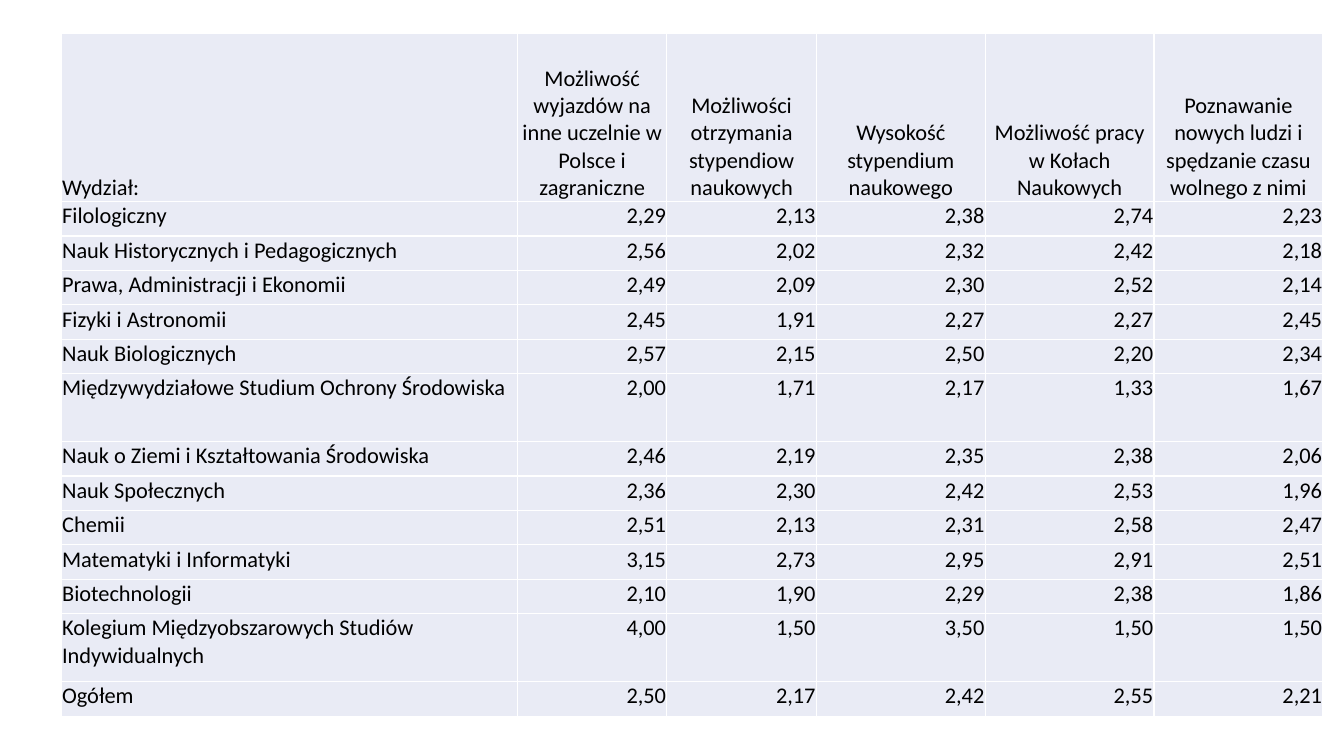
from lxml.etree import SubElement
from pptx import Presentation
from pptx.dml.color import RGBColor
from pptx.enum.text import MSO_ANCHOR, PP_ALIGN
from pptx.oxml.ns import qn
from pptx.util import Pt

SCALE = 7620
BLACK = RGBColor(0x00, 0x00, 0x00)
WHITE = RGBColor(0xFF, 0xFF, 0xFF)
PALE = RGBColor(0xE9, 0xEB, 0xF5)

HEADS = [
    "Wydział:",
    "Możliwość wyjazdów na inne uczelnie w Polsce i zagraniczne",
    "Możliwości otrzymania stypendiow naukowych",
    "Wysokość stypendium naukowego",
    "Możliwość pracy w Kołach Naukowych",
    "Poznawanie nowych ludzi i spędzanie czasu wolnego z nimi",
]
SCORES = [
    ("Filologiczny", "2,29 2,13 2,38 2,74 2,23"),
    ("Nauk Historycznych i Pedagogicznych", "2,56 2,02 2,32 2,42 2,18"),
    ("Prawa, Administracji i Ekonomii", "2,49 2,09 2,30 2,52 2,14"),
    ("Fizyki i Astronomii", "2,45 1,91 2,27 2,27 2,45"),
    ("Nauk Biologicznych", "2,57 2,15 2,50 2,20 2,34"),
    ("Międzywydziałowe Studium Ochrony Środowiska", "2,00 1,71 2,17 1,33 1,67"),
    ("Nauk o Ziemi i Kształtowania Środowiska", "2,46 2,19 2,35 2,38 2,06"),
    ("Nauk Społecznych", "2,36 2,30 2,42 2,53 1,96"),
    ("Chemii", "2,51 2,13 2,31 2,58 2,47"),
    ("Matematyki i Informatyki", "3,15 2,73 2,95 2,91 2,51"),
    ("Biotechnologii", "2,10 1,90 2,29 2,38 1,86"),
    ("Kolegium Międzyobszarowych Studiów Indywidualnych", "4,00 1,50 3,50 1,50 1,50"),
    ("Ogółem", "2,50 2,17 2,42 2,55 2,21"),
]
WIDTHS = [543, 178, 178, 201, 201, 201]
HEAD, LOW, TALL = 200, 41, 81
LONG = 40


def px(size):
    return size * SCALE


class Sheet:
    font = "Calibri"
    size = Pt(16)

    def __init__(self, deck):
        self.slide = deck.slides.add_slide(deck.slide_layouts[6])

    def table(self, left, top, widths, heights, rows):
        frame = self.slide.shapes.add_table(
            len(rows), len(widths), px(left), px(top),
            px(sum(widths)), px(sum(heights)))
        grid = frame.table
        grid.first_row = grid.horz_banding = False
        for col, width in zip(grid.columns, widths):
            col.width = px(width)
        for row, height in zip(grid.rows, heights):
            row.height = px(height)
        for y, row in enumerate(rows):
            for x, text in enumerate(row):
                self.cell(grid.cell(y, x), text, y == 0, x == 0)

    def cell(self, cell, text, head, name):
        cell.margin_left = cell.margin_right = cell.margin_top = px(1)
        cell.margin_bottom = 0
        cell.vertical_anchor = MSO_ANCHOR.BOTTOM if head else MSO_ANCHOR.TOP
        self.edges(cell)
        cell.fill.solid()
        cell.fill.fore_color.rgb = PALE
        para = cell.text_frame.paragraphs[0]
        if name:
            para.alignment = PP_ALIGN.LEFT
        else:
            para.alignment = PP_ALIGN.CENTER if head else PP_ALIGN.RIGHT
        self.run(para, text)

    def edges(self, cell):
        props = cell._tc.get_or_add_tcPr()
        for side in ("a:lnL", "a:lnR", "a:lnT", "a:lnB"):
            line = SubElement(props, qn(side), w=str(Pt(1)))
            fill = SubElement(line, qn("a:solidFill"))
            SubElement(fill, qn("a:srgbClr"), val=str(WHITE))

    def run(self, para, text):
        run = para.add_run()
        run.text = text
        run.font.name = self.font
        run.font.size = self.size
        run.font.color.rgb = BLACK


def main():
    deck = Presentation()
    deck.slide_width, deck.slide_height = px(1600), px(900)
    rows = [HEADS] + [[name, *marks.split()] for name, marks in SCORES]
    heights = [HEAD] + [TALL if len(name) > LONG else LOW for name, _ in SCORES]
    Sheet(deck).table(73, 40, WIDTHS, heights, rows)
    deck.save("out.pptx")


if __name__ == "__main__":
    main()
